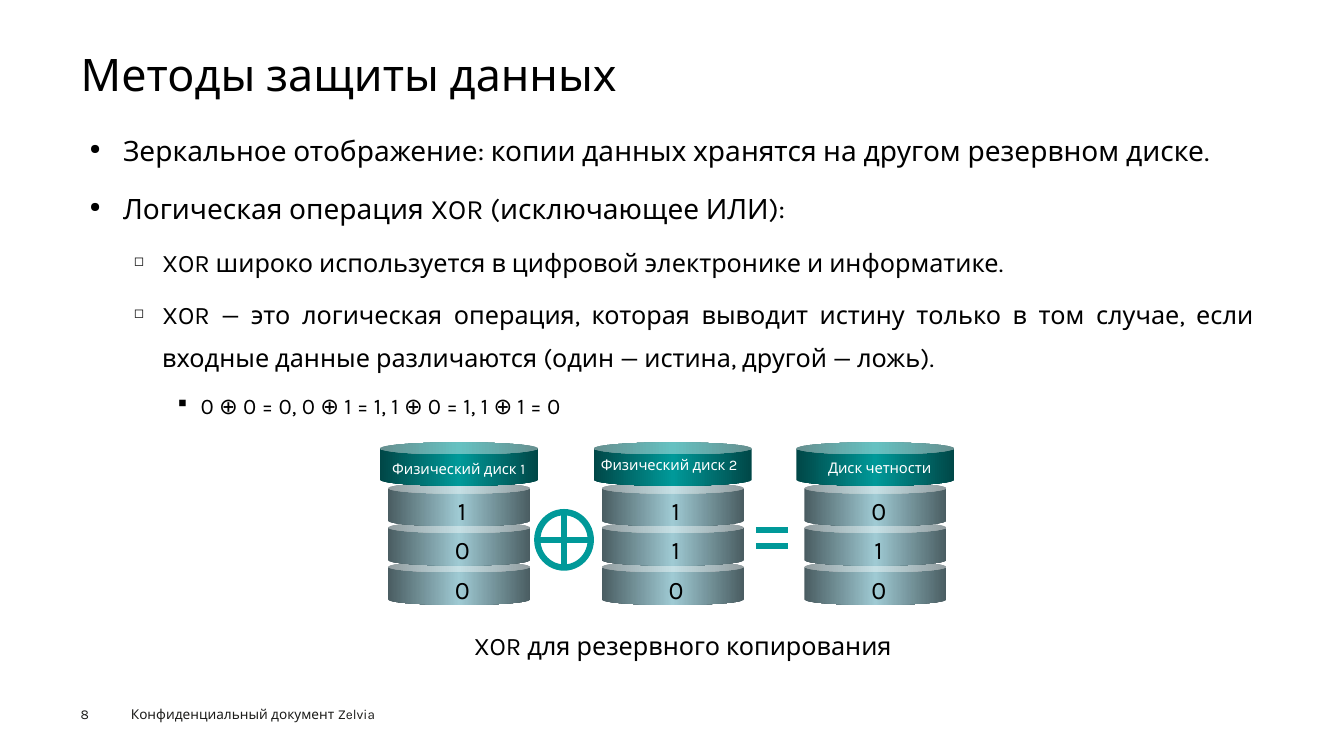
from copy import deepcopy

from lxml.etree import SubElement
from pptx import Presentation
from pptx.dml.color import RGBColor
from pptx.enum.shapes import MSO_CONNECTOR as CONN, MSO_SHAPE as SHAPE
from pptx.enum.text import MSO_ANCHOR as ANCHOR, PP_ALIGN as ALIGN
from pptx.oxml.ns import qn
from pptx.util import Pt

FONT = "Karla"
BLACK = RGBColor(0x00, 0x00, 0x00)
WHITE = RGBColor(0xFF, 0xFF, 0xFF)
INK = RGBColor(0x1D, 0x1D, 0x1B)
TEAL = RGBColor(0x00, 0x99, 0x99)
DARK_TEAL = RGBColor(0x00, 0x47, 0x47)
STEEL = RGBColor(0x4A, 0x5D, 0x62)
PALE_STEEL = RGBColor(0x9F, 0xCA, 0xD3)

BULLETS = [
    (0, "Зеркальное отображение: копии данных хранятся на другом резервном диске."),
    (0, "Логическая операция XOR (исключающее ИЛИ):"),
    (1, "XOR широко используется в цифровой электронике и информатике."),
    (1, "XOR — это логическая операция, которая выводит истину только в том случае, "
        "если входные данные различаются (один — истина, другой — ложь)."),
    (2, "0 ⊕ 0 = 0, 0 ⊕ 1 = 1, 1 ⊕ 0 = 1, 1 ⊕ 1 = 0"),
]
LEVELS = [
    dict(size=20, before=7.9, bullet="●", left=23.8, hang=23.8),
    dict(size=18, before=7.2, bullet="◻", left=51.8, hang=20.2),
    dict(size=16, before=6.5, bullet="■", left=79.2, hang=15.8),
]
DISKS = [
    (429.8, "110", "Физический диск 2", (419, 321.8, 118, 28.8)),
    (277.2, "100", "Физический диск 1", (268.6, 324.7, 118, 28.8)),
    (574.6, "010", "Диск четности", (581.8, 324, 93, 22.3)),
]


def write(p, text, size=18, color=BLACK, align=ALIGN.LEFT, spacing=None,
          before=None, bullet=None, left=0, hang=0):
    p.alignment = align
    if spacing:
        p.line_spacing = spacing
    if before is not None:
        p.space_before = Pt(before)
    if bullet:
        pPr = p._p.get_or_add_pPr()
        pPr.set("marL", str(Pt(left)))
        pPr.set("indent", str(-Pt(hang)))
        SubElement(pPr, qn("a:buSzPct")).set("val", "50000")
        SubElement(pPr, qn("a:buChar")).set("char", bullet)
    r = p.add_run()
    r.text = text
    r.font.name, r.font.size, r.font.color.rgb = FONT, Pt(size), color


class Deck:
    """Draws styled elements on the current slide, with lengths in points."""

    def __init__(self, prs):
        self.s = prs.slides.add_slide(prs.slide_layouts[5])

    def frame(self, tf, inset, wrap, anchor=ANCHOR.TOP):
        tf.margin_left = tf.margin_right = Pt(inset[0])
        tf.margin_top = tf.margin_bottom = Pt(inset[1])
        tf.word_wrap = wrap
        tf.vertical_anchor = anchor
        return tf

    def title(self, text, x, y, w, h):
        sp = self.s.shapes.title
        sp.left, sp.top, sp.width, sp.height = map(Pt, (x, y, w, h))
        tf = self.frame(sp.text_frame, (0, 0), True, ANCHOR.MIDDLE)
        write(tf.paragraphs[0], text, size=32, spacing=0.9)

    def text(self, text, x, y, w, h, inset=(7.2, 3.6), wrap=False, **style):
        sp = self.s.shapes.add_textbox(*map(Pt, (x, y, w, h)))
        tf = self.frame(sp.text_frame, inset, wrap)
        write(tf.paragraphs[0], text, **style)

    def bullets(self, items, x, y, w, h):
        sp = self.s.shapes.add_textbox(*map(Pt, (x, y, w, h)))
        tf = self.frame(sp.text_frame, (6.5, 2.9), True)
        for i, (level, text) in enumerate(items):
            p = tf.add_paragraph() if i else tf.paragraphs[0]
            style = dict(LEVELS[level])
            if not i:
                style["before"] = 0
            write(p, text, align=ALIGN.JUSTIFY, spacing=1.4, **style)

    def can(self, x, y, w, h, adj, edge, middle):
        sp = self.s.shapes.add_shape(SHAPE.CAN, *map(Pt, (x, y, w, h)))
        sp.shadow.inherit = False
        sp.adjustments[0] = adj
        sp.line.fill.background()
        sp.fill.gradient()
        sp.fill.gradient_angle = 0
        stops = sp._element.spPr.find(".//" + qn("a:gsLst"))
        stops.append(deepcopy(stops[0]))
        for stop, place, color in zip(sp.fill.gradient_stops, (0, 0.5, 1), (edge, middle, edge)):
            stop.position = place
            stop.color.rgb = color

    def disk(self, x, bits, label, label_box):
        for i in reversed(range(len(bits))):
            self.can(x, 344.9 + 28.1 * i, 101.5, 31, 0.25, STEEL, PALE_STEEL)
        for i, bit in enumerate(bits):
            self.text(bit, x + 40.7, 350 + 28.4 * i, 24.5, 28.8, align=ALIGN.CENTER)
        self.can(x - 5.8, 316, 113, 31, 0.279, DARK_TEAL, TEAL)
        self.text(label, *label_box, size=10.5, color=WHITE, align=ALIGN.CENTER)

    def xor_sign(self, x, y, w, h):
        sp = self.s.shapes.add_shape(SHAPE.FLOWCHART_OR, *map(Pt, (x, y, w, h)))
        sp.shadow.inherit = False
        sp.fill.solid()
        sp.fill.fore_color.rgb = WHITE
        sp.line.color.rgb, sp.line.width = TEAL, Pt(4.5)

    def line(self, x1, y1, x2, y2):
        ln = self.s.shapes.add_connector(CONN.STRAIGHT, *map(Pt, (x1, y1, x2, y2)))
        ln.line.color.rgb, ln.line.width = TEAL, Pt(4.5)
        SubElement(ln._element.spPr, qn("a:effectLst"))


def main():
    prs = Presentation()
    prs.slide_width, prs.slide_height = Pt(960), Pt(540)
    deck = Deck(prs)
    deck.text("Конфиденциальный документ Zelvia", 86.4, 500.4, 206, 18.7, size=9.7, color=INK)
    deck.text("8", 57.6, 504, 39.6, 11.5, inset=(0, 0), wrap=True, size=9.7, color=INK)
    deck.title("Методы защиты данных", 57.6, 35.3, 844.6, 38.9)
    deck.bullets(BULLETS, 57.6, 82.8, 844.6, 383.8)
    for disk in DISKS:
        deck.disk(*disk)
    deck.xor_sign(383.8, 365.8, 38.2, 39.6)
    for y in (378.7, 390.2):
        deck.line(540, y, 563, y)
    deck.text("XOR для резервного копирования", 331.9, 447.1, 332.6, 31,
              inset=(6.5, 2.9), wrap=True)
    prs.save("out.pptx")


if __name__ == "__main__":
    main()
